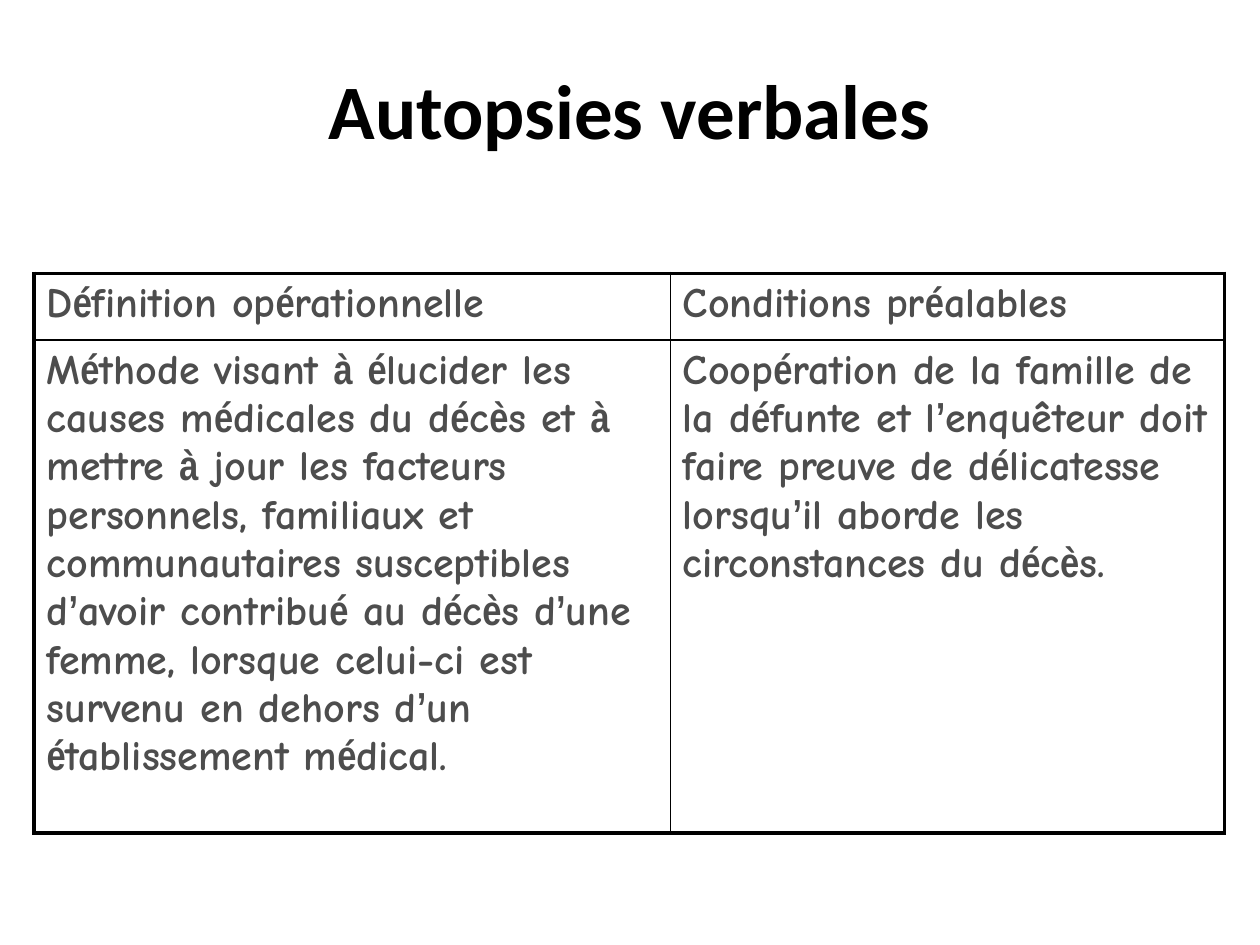
from itertools import groupby
from lxml.etree import SubElement
from pptx import Presentation
from pptx.dml.color import RGBColor
from pptx.enum.text import MSO_ANCHOR, PP_ALIGN
from pptx.oxml.ns import qn
from pptx.util import Inches, Pt

# Content
TITLE = "Autopsies verbales"
ROWS = [
    ("Définition opérationnelle", "Conditions préalables"),
    ("Méthode visant à élucider les causes médicales du décès et à mettre à jour "
     "les facteurs personnels, familiaux et communautaires susceptibles d’avoir "
     "contribué au décès d’une femme, lorsque celui-ci est survenu en dehors d’un "
     "établissement médical.",
     "Coopération de la famille de la défunte et l’enquêteur doit faire preuve de "
     "délicatesse lorsqu’il aborde les circonstances du décès."),
]
COL_WIDTHS = (5.05, 4.4)
ROW_HEIGHTS = (0.53, 3.91)
ACCENTED = "éèà’"  # characters set in the accent font
OUTER, INNER = 2.25, 1


def rgb(value):
    return RGBColor.from_string(value)


def write(tf, text, font, size, color, accent_font=None, align=PP_ALIGN.LEFT,
          before=0, after=0):
    """Write one bold paragraph, with accented characters in their own font."""
    p = tf.paragraphs[0]
    p.alignment = align
    p.space_before, p.space_after = Pt(before), Pt(after)
    for accented, chars in groupby(text, lambda ch: ch in ACCENTED):
        r = p.add_run()
        r.text = "".join(chars)
        r.font.name = accent_font if accented and accent_font else font
        r.font.size = Pt(size)
        r.font.bold = True
        r.font.color.rgb = rgb(color)


def set_borders(cell, widths, color="000000"):
    tcPr = cell._tc.get_or_add_tcPr()
    for side, width in zip("LRTB", widths):
        ln = SubElement(tcPr, qn(f"a:ln{side}"), w=str(Pt(width)))
        fill = SubElement(ln, qn("a:solidFill"))
        SubElement(fill, qn("a:srgbClr"), val=color)


prs = Presentation()
prs.slide_width, prs.slide_height = Inches(10), Inches(7.5)
s = prs.slides.add_slide(prs.slide_layouts[0])
subtitle = s.placeholders[1]
subtitle.element.getparent().remove(subtitle.element)

# Title
title = s.shapes.title
title.left, title.top = Inches(0.5), Inches(0.52)
title.width, title.height = Inches(9), Inches(0.69)
title.text_frame.vertical_anchor = MSO_ANCHOR.MIDDLE
write(title.text_frame, TITLE, "Calibri", 44, "000000", align=PP_ALIGN.CENTER)

# Table with a heavy frame and thin inner rules
n_rows, n_cols = len(ROW_HEIGHTS), len(COL_WIDTHS)
table = s.shapes.add_table(n_rows, n_cols, Inches(0.27), Inches(2.17),
                           Inches(sum(COL_WIDTHS)), Inches(sum(ROW_HEIGHTS))).table
table.first_row = table.horz_banding = False
for col, width in zip(table.columns, COL_WIDTHS):
    col.width = Inches(width)
for row, height in zip(table.rows, ROW_HEIGHTS):
    row.height = Inches(height)

for i, texts in enumerate(ROWS):
    for j, text in enumerate(texts):
        cell = table.cell(i, j)
        edges = (j == 0, j == n_cols - 1, i == 0, i == n_rows - 1)
        set_borders(cell, [OUTER if edge else INNER for edge in edges])
        cell.fill.background()
        write(cell.text_frame, text, "Comic Neue", 24, "4D4D4D",
              accent_font="Arial Narrow", before=2.4, after=4.8)

prs.save("out.pptx")
